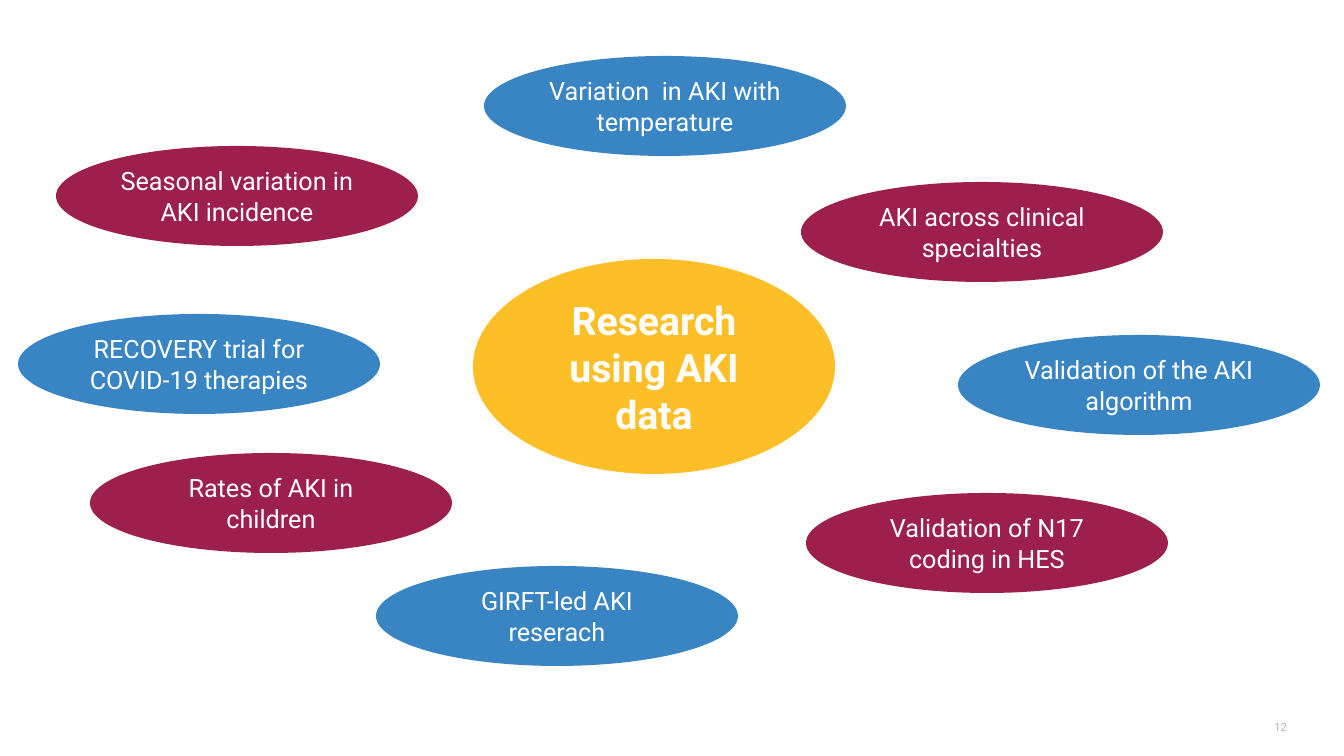
from dataclasses import dataclass

from pptx import Presentation
from pptx import util as u
from pptx.dml.color import RGBColor
from pptx.enum import shapes, text

SLIDE = (1344, 756)
TOPIC_SIZE = (362, 100)
HUB_SIZE = (362, 215)

CLINICAL_TOPICS = [
    ("Seasonal variation in AKI incidence", 56, 146),
    ("AKI across clinical specialties", 801, 182),
    ("Rates of AKI in children", 90, 453),
    ("Validation of N17 coding in HES", 806, 493),
]
STUDY_TOPICS = [
    ("Validation of the AKI algorithm", 958, 335),
    ("Variation  in AKI with temperature", 484, 56),
    ("RECOVERY trial for COVID-19 therapies", 18, 314),
    ("GIRFT-led AKI reserach", 376, 566),
]
HUB = ("Research using AKI data", 473, 259)
PAGE_NUMBER = ("12", 1248, 720, 39, 13)


@dataclass(frozen=True)
class Theme:
    font: str = "Roboto"
    claret: str = "9C1F4C"
    blue: str = "3984C2"
    yellow: str = "FCBF27"
    white: str = "FFFFFF"
    grey: str = "B7B4B3"
    topic_pt: int = 18
    hub_pt: int = 28
    page_pt: int = 8


THEME = Theme()


def px(n):
    return u.Emu(round(n * 914400 / 100.8))


def write(tf, words, size, color, align, bold=False):
    tf.word_wrap = True
    p = tf.paragraphs[0]
    p.text = words
    p.alignment = align
    p.font.name = THEME.font
    p.font.size = u.Pt(size)
    p.font.bold = bold
    p.font.color.rgb = RGBColor.from_string(color)


def add_ellipse(s, topic, dims, fill, size, bold=False):
    words, x, y = topic
    sp = s.shapes.add_shape(shapes.MSO_SHAPE.OVAL, *map(px, (x, y, *dims)))
    sp.shadow.inherit = False
    sp.fill.solid()
    sp.fill.fore_color.rgb = RGBColor.from_string(fill)
    sp.line.fill.background()
    sp.text_frame.vertical_anchor = text.MSO_ANCHOR.MIDDLE
    write(sp.text_frame, words, size, THEME.white, text.PP_ALIGN.CENTER, bold)


def add_page_number(s):
    words, *box = PAGE_NUMBER
    tf = s.shapes.add_textbox(*map(px, box)).text_frame
    tf.margin_left = tf.margin_right = tf.margin_top = tf.margin_bottom = 0
    write(tf, words, THEME.page_pt, THEME.grey, text.PP_ALIGN.RIGHT)


def main():
    prs = Presentation()
    prs.slide_width, prs.slide_height = map(px, SLIDE)
    s = prs.slides.add_slide(prs.slide_layouts[6])
    add_page_number(s)
    for topics, fill in ((CLINICAL_TOPICS, THEME.claret), (STUDY_TOPICS, THEME.blue)):
        for topic in topics:
            add_ellipse(s, topic, TOPIC_SIZE, fill, THEME.topic_pt)
    add_ellipse(s, HUB, HUB_SIZE, THEME.yellow, THEME.hub_pt, bold=True)
    prs.save("out.pptx")


if __name__ == "__main__":
    main()
